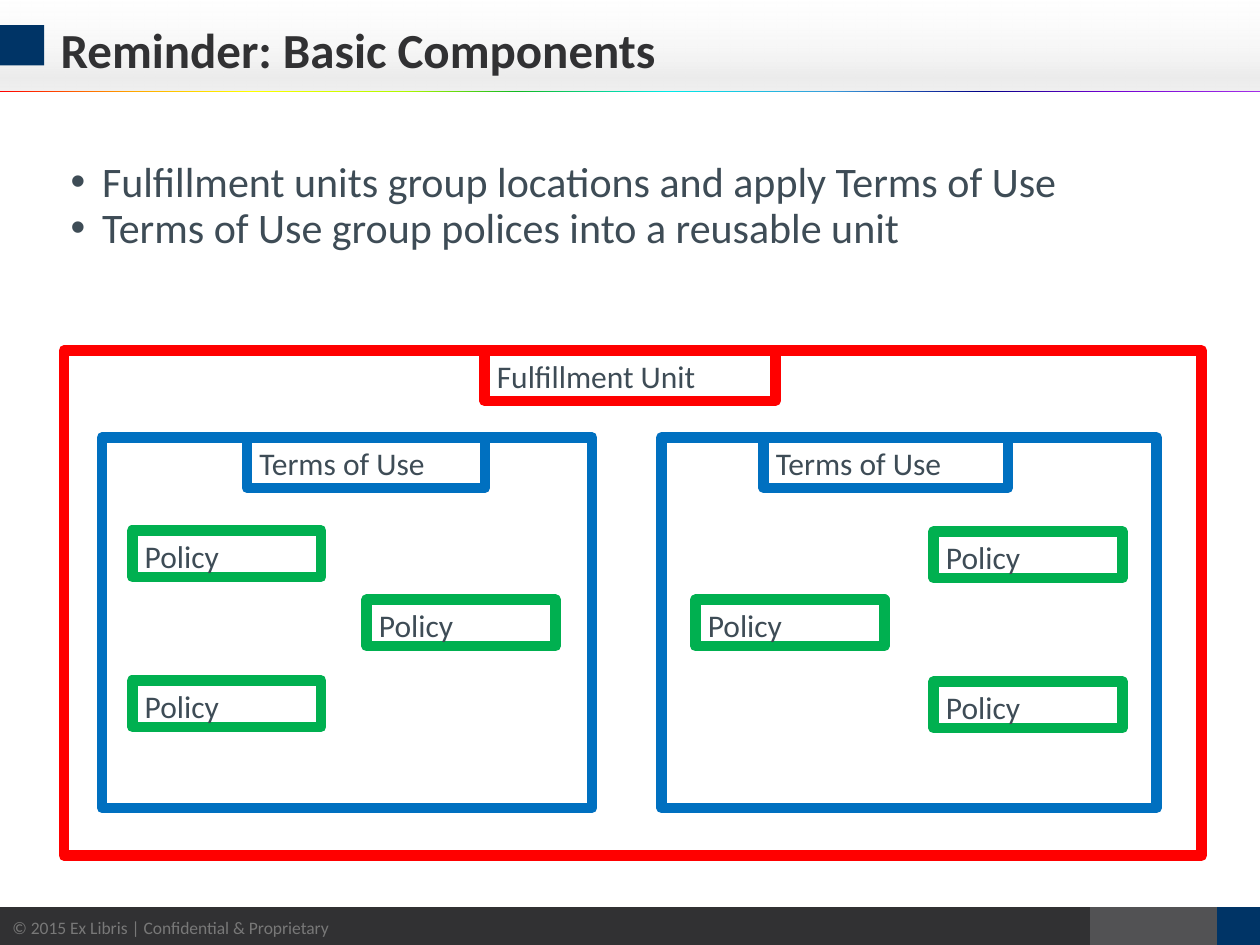
from lxml.etree import SubElement
from pptx import Presentation
from pptx.dml.color import RGBColor
from pptx.enum.shapes import MSO_SHAPE
from pptx.enum.text import MSO_ANCHOR, MSO_AUTO_SIZE, PP_ALIGN
from pptx.oxml.ns import qn
from pptx.util import Pt

COLORS = {
    "ink": "313133", "text": "3E4C56", "muted": "787878", "navy": "003466",
    "gray": "525254", "unit": "FF0000", "terms": "0070C0", "policy": "00B050",
}
TITLE = "Reminder: Basic Components"
BULLETS = [
    "Fulfillment units group locations and apply Terms of Use",
    "Terms of Use group polices into a reusable unit",
]
COPYRIGHT = "© 2015 Ex Libris | Confidential & Proprietary"
HEADER_STOPS = [(0, "FAFAFA", 12), (66, "D7D7D7", 30), (83, "D7D7D7", 47), (100, "E4E4E4", 54)]
RAINBOW_STOPS = [
    (0, "A22DE8", 100), (12, "7200D1", 100), (22, "000086", 100), (34, "399CDB", 100),
    (47, "00E9E8", 100), (59, "11B920", 100), (68, "B1F900", 100), (80, "FFFF00", 100),
    (89, "FFAB00", 100), (100, "FF0000", 100),
]
GRADIENT_BANDS = [
    ((-0.7, 0.7, 720.7, 51.8), HEADER_STOPS, 90),
    ((0, 51.8, 720, 1), RAINBOW_STOPS, 180),
]
SOLID_BANDS = [
    ((622.8, 518.4, 72.7, 23), "gray", ""),
    ((695.5, 518.4, 25.2, 23), "navy", ""),
    ((0, 518.4, 622.8, 23), "ink", COPYRIGHT),
    ((0, 14.4, 25.2, 23), "navy", ""),
]
CONTAINERS = [
    {"role": "unit", "label": "Fulfillment Unit", "frame": (36.5, 200.3, 650.2, 288.7),
     "tab": (276.8, 166.3), "policies": []},
    {"role": "terms", "label": "Terms of Use", "frame": (58.3, 250, 280.1, 211.7),
     "tab": (141.1, 136.1), "policies": [(75.6, 303.1), (75.6, 388.8), (209.5, 342.7)]},
    {"role": "terms", "label": "Terms of Use", "frame": (378, 250, 283, 211.7),
     "tab": (436.3, 139.7), "policies": [(397.4, 342.7), (533.5, 303.8), (533.5, 389.5)]},
]
TAB_HEIGHT = 28.8
POLICY_SIZE = (108, 26.6)
FORMATS = {
    "title": {"size": Pt(28), "bold": True, "color": "ink"},
    "bullet": {"size": Pt(24), "bold": False, "color": "text"},
    "label": {"size": Pt(18), "bold": False, "color": "text"},
    "copyright": {"size": Pt(10), "bold": False, "color": "muted"},
}


def rgb(name):
    return RGBColor.from_string(COLORS[name])


def style(paragraph, role, **layout):
    for name, value in {"alignment": PP_ALIGN.LEFT, **layout}.items():
        setattr(paragraph, name, value)
    for name, value in {"name": "Calibri", **FORMATS[role]}.items():
        if name == "color":
            paragraph.font.color.rgb = rgb(value)
        else:
            setattr(paragraph.font, name, value)


def place(placeholder, box, anchor):
    for name, value in zip(("left", "top", "width", "height"), box):
        setattr(placeholder, name, Pt(value))
    frame = placeholder.text_frame
    for name, value in {"auto_size": MSO_AUTO_SIZE.NONE, "word_wrap": True,
                        "vertical_anchor": anchor}.items():
        setattr(frame, name, value)
    return frame


def add_rectangle(shapes, box):
    rectangle = shapes.add_shape(MSO_SHAPE.RECTANGLE, *map(Pt, box))
    rectangle.shadow.inherit = False
    rectangle.line.fill.background()
    return rectangle


def write(rectangle, text, role, anchor):
    rectangle.text_frame.vertical_anchor = anchor
    rectangle.text_frame.text = text
    style(rectangle.text_frame.paragraphs[0], role)


def add_gradient(shapes, box, stops, angle):
    band = add_rectangle(shapes, box)
    band.fill.gradient()
    gradient = band._element.spPr.find(qn("a:gradFill"))
    stop_list = gradient.find(qn("a:gsLst"))
    for stop in list(stop_list):
        stop_list.remove(stop)
    for position, color, opacity in stops:
        stop = SubElement(stop_list, qn("a:gs"), pos=str(position * 1000))
        shade = SubElement(stop, qn("a:srgbClr"), val=color)
        if opacity < 100:
            SubElement(shade, qn("a:alpha"), val=str(opacity * 1000))
    gradient.find(qn("a:lin")).set("ang", str(angle * 60000))


def add_outline(shapes, box, role, label=""):
    outline = add_rectangle(shapes, box)
    outline.fill.background()
    outline.line.color.rgb = rgb(role)
    outline.line.width = Pt(6)
    SubElement(outline._element.spPr.find(qn("a:ln")), qn("a:round"))
    if label:
        write(outline, label, "label", MSO_ANCHOR.TOP)


def add_bullets(frame):
    frame.text = "\n".join(BULLETS)
    for paragraph in frame.paragraphs:
        properties = paragraph._p.get_or_add_pPr()
        properties.set("marL", str(Pt(18)))
        properties.set("indent", str(-Pt(18)))
        SubElement(properties, qn("a:buFont"), typeface="Arial")
        SubElement(properties, qn("a:buChar"), char="•")
        style(paragraph, "bullet", line_spacing=0.9, space_before=Pt(0))


def main():
    """Build the slide on fulfillment units, terms of use and policies."""
    presentation = Presentation()
    presentation.slide_width, presentation.slide_height = Pt(720), Pt(540)
    slide = presentation.slides.add_slide(presentation.slide_layouts[1])
    shapes = slide.shapes
    title, body = slide.placeholders

    for box, stops, angle in GRADIENT_BANDS:
        add_gradient(shapes, box, stops, angle)
    for box, color, text in SOLID_BANDS:
        band = add_rectangle(shapes, box)
        band.fill.solid()
        band.fill.fore_color.rgb = rgb(color)
        if text:
            write(band, text, "copyright", MSO_ANCHOR.MIDDLE)

    for placeholder in (title, body):
        shapes._spTree.append(placeholder._element)
    heading = place(title, (27.4, 9.4, 683.3, 41.8), MSO_ANCHOR.MIDDLE)
    heading.text = TITLE
    style(heading.paragraphs[0], "title", line_spacing=0.9)
    add_bullets(place(body, (33.1, 88.6, 650.2, 72.7), MSO_ANCHOR.TOP))

    diagram = shapes.add_group_shape().shapes
    for container in CONTAINERS:
        role, frame = container["role"], container["frame"]
        tab_left, tab_width = container["tab"]
        add_outline(diagram, frame, role)
        add_outline(diagram, (tab_left, frame[1], tab_width, TAB_HEIGHT), role, container["label"])
        for corner in container["policies"]:
            add_outline(diagram, corner + POLICY_SIZE, "policy", "Policy")

    presentation.save("out.pptx")


if __name__ == "__main__":
    main()
